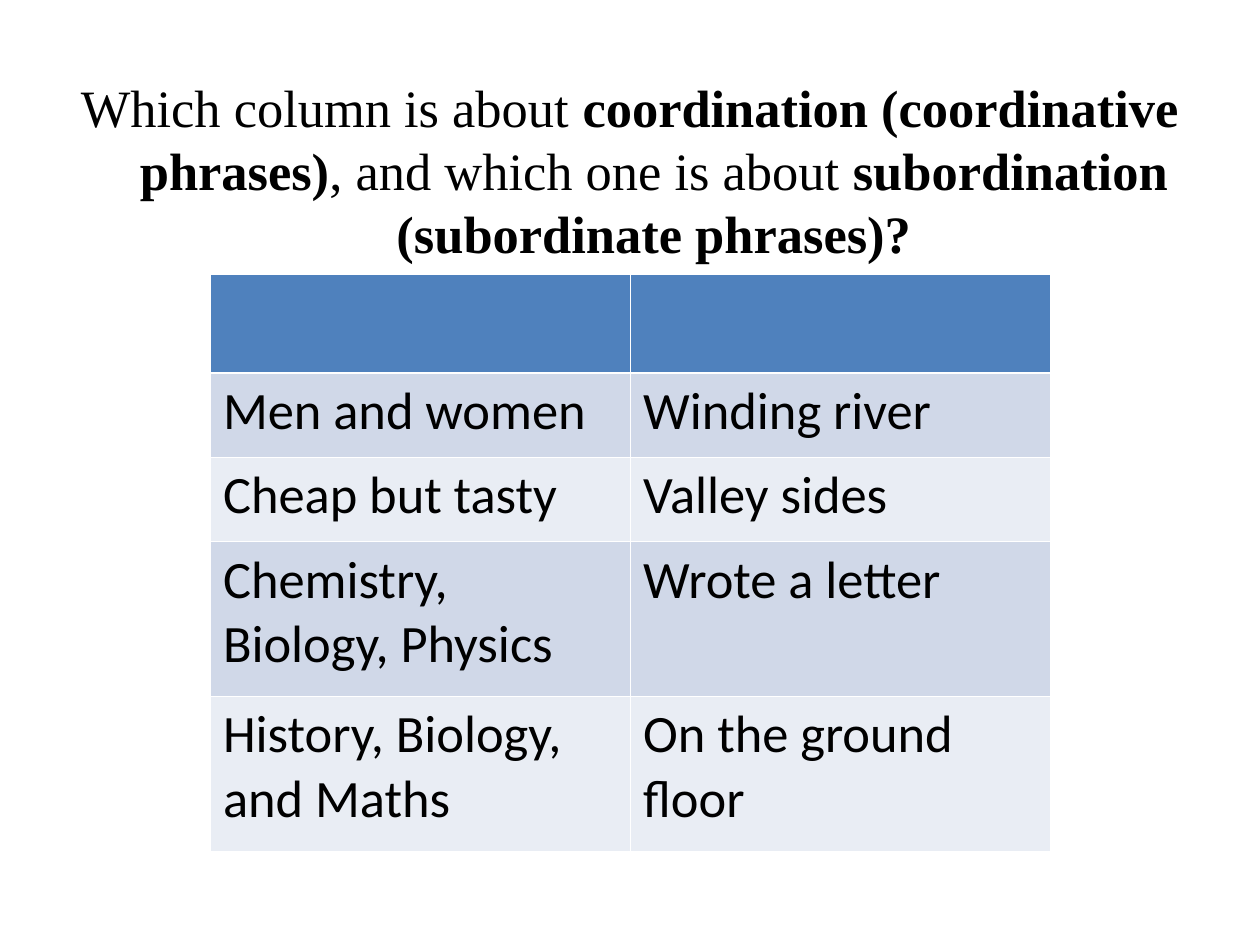
from dataclasses import dataclass

from pptx import Presentation
from pptx.dml.color import RGBColor
from pptx.enum.text import PP_ALIGN
from pptx.util import Inches, Pt

CENTER = PP_ALIGN.CENTER


@dataclass(frozen=True)
class Theme:
    text: RGBColor = RGBColor.from_string("000000")
    header: RGBColor = RGBColor.from_string("4F81BD")
    dark_band: RGBColor = RGBColor.from_string("D0D8E8")
    light_band: RGBColor = RGBColor.from_string("E9EDF4")
    question_font: str = "Times New Roman"
    table_font: str = "Calibri"
    size: Pt = Pt(30)


theme = Theme()


def style_font(paragraph, name):
    paragraph.font.name = name
    paragraph.font.size = theme.size
    paragraph.font.color.rgb = theme.text


presentation = Presentation()
presentation.slide_width = Inches(10)
presentation.slide_height = Inches(7.5)
slide = presentation.slides.add_slide(presentation.slide_layouts[6])

# Question with a hanging indent
question = slide.shapes.add_textbox(Inches(0.5), Inches(0.55), Inches(9), Inches(1.6))
question.text_frame.word_wrap = True
paragraph = question.text_frame.paragraphs[0]
paragraph.alignment = CENTER
properties = paragraph._p.get_or_add_pPr()
properties.set("marL", str(Inches(0.38)))
properties.set("indent", str(Inches(-0.38)))
style_font(paragraph, theme.question_font)
for text, bold in (
    ("Which column is about ", False),
    ("coordination (coordinative phrases)", True),
    (", and which one is about ", False),
    ("subordination (subordinate phrases)?", True),
):
    run = paragraph.add_run()
    run.text = text
    run.font.bold = bold

# Phrase table; the default table style supplies the white borders
phrases = (
    ("", ""),
    ("Men and women", "Winding river"),
    ("Cheap but tasty", "Valley sides"),
    ("Chemistry, Biology, Physics", "Wrote a letter"),
    ("History, Biology, and Maths", "On the ground floor"),
)
row_heights = (0.78, 0.67, 0.67, 1.23, 1.23)
table = slide.shapes.add_table(
    len(phrases), 2, Inches(1.67), Inches(2.18), Inches(6.67), Inches(sum(row_heights))
).table
for row_index, (row_phrases, height) in enumerate(zip(phrases, row_heights)):
    table.rows[row_index].height = Inches(height)
    if row_index == 0:
        fill_color = theme.header
    else:
        fill_color = theme.dark_band if row_index % 2 else theme.light_band
    for column_index, phrase in enumerate(row_phrases):
        cell = table.cell(row_index, column_index)
        cell.fill.solid()
        cell.fill.fore_color.rgb = fill_color
        cell.text = phrase
        style_font(cell.text_frame.paragraphs[0], theme.table_font)

presentation.save("out.pptx")
